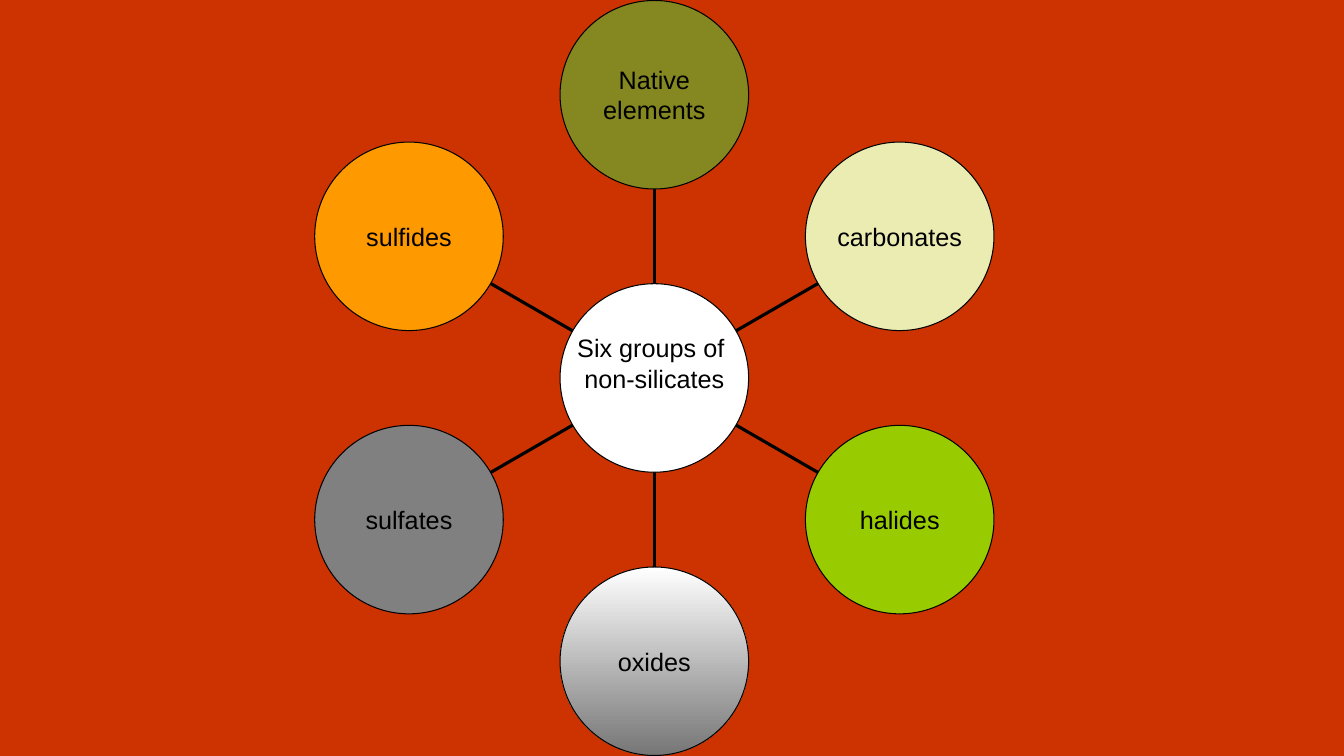
from math import cos, radians, sin

from pptx import Presentation
from pptx.dml.color import RGBColor
from pptx.enum.shapes import MSO_CONNECTOR as Connector, MSO_SHAPE as Shape
from pptx.enum.text import MSO_ANCHOR as Anchor, PP_ALIGN as Align
from pptx.oxml.ns import qn
from pptx.util import Inches, Pt

COLOURS = {
    "background": "CC3300",
    "black": "000000",
    "white": "FFFFFF",
    "orange": "FF9900",
    "grey": "808080",
    "dark grey": "767676",
    "green": "99CC00",
    "cream": "EBECB2",
    "olive": "858721",
}
CENTRE_X, CENTRE_Y = 6.49, 3.75
DIAMETER = 1.87
ORBIT = 2.81
GROUPS = [
    ("sulfides", 210, ["orange"]),
    ("sulfates", 150, ["grey"]),
    ("oxides", 90, ["white", "dark grey"]),
    ("halides", 30, ["green"]),
    ("carbonates", 330, ["cream"]),
    ("Native\nelements", 270, ["olive"]),
]


def colour(name):
    return RGBColor.from_string(COLOURS[name])


def point(angle, distance):
    turn = radians(angle)
    return CENTRE_X + distance * cos(turn), CENTRE_Y + distance * sin(turn)


def write_text(box, text, size=18, font="Arial", ink="black", bottom=0):
    frame = box.text_frame
    frame.word_wrap = False
    frame.vertical_anchor = Anchor.MIDDLE
    frame.margin_left = frame.margin_right = frame.margin_top = 0
    frame.margin_bottom = Inches(bottom)
    for index, line in enumerate(text.split("\n")):
        para = frame.add_paragraph() if index else frame.paragraphs[0]
        para.alignment = Align.CENTER
        span = para.add_run()
        span.text = line
        span.font.size = Pt(size)
        span.font.name = font
        span.font.color.rgb = colour(ink)


def paint(fill, names):
    if len(names) == 1:
        fill.solid()
        fill.fore_color.rgb = colour(names[0])
        return
    fill.gradient()
    fill.gradient_angle = 270
    for stop, name, position in zip(fill.gradient_stops, names, (0, 1)):
        stop.color.rgb = colour(name)
        stop.position = position


def add_circle(diagram, text, middle, fills, **text_format):
    left, top = (value - DIAMETER / 2 for value in middle)
    circle = diagram.shapes.add_shape(
        Shape.OVAL, Inches(left), Inches(top), Inches(DIAMETER), Inches(DIAMETER)
    )
    circle.shadow.inherit = False
    paint(circle.fill, fills)
    circle.line.color.rgb = colour("black")
    circle.line.width = Pt(0.75)
    write_text(circle, text, **text_format)


def add_spoke(diagram, angle):
    start = point(angle, DIAMETER / 2)
    end = point(angle, ORBIT - DIAMETER / 2)
    spoke = diagram.shapes.add_connector(
        Connector.STRAIGHT, *(Inches(value) for value in start + end)
    )
    spoke.line.color.rgb = colour("black")
    spoke.line.width = Pt(2.25)
    properties = spoke._element.spPr
    properties.append(properties.makeelement(qn("a:effectLst"), {}))


def main():
    deck = Presentation()
    deck.slide_width, deck.slide_height = Inches(13.33), Inches(7.5)
    page = deck.slides.add_slide(deck.slide_layouts[6])
    paint(page.background.fill, ["background"])
    diagram = page.shapes.add_group_shape()
    for text, angle, fills in GROUPS:
        add_spoke(diagram, angle)
        add_circle(diagram, text, point(angle, ORBIT), fills)
    add_circle(
        diagram, "Six groups of \nnon-silicates", (CENTRE_X, CENTRE_Y), ["white"], bottom=0.3
    )
    deck.save("out.pptx")


if __name__ == "__main__":
    main()
